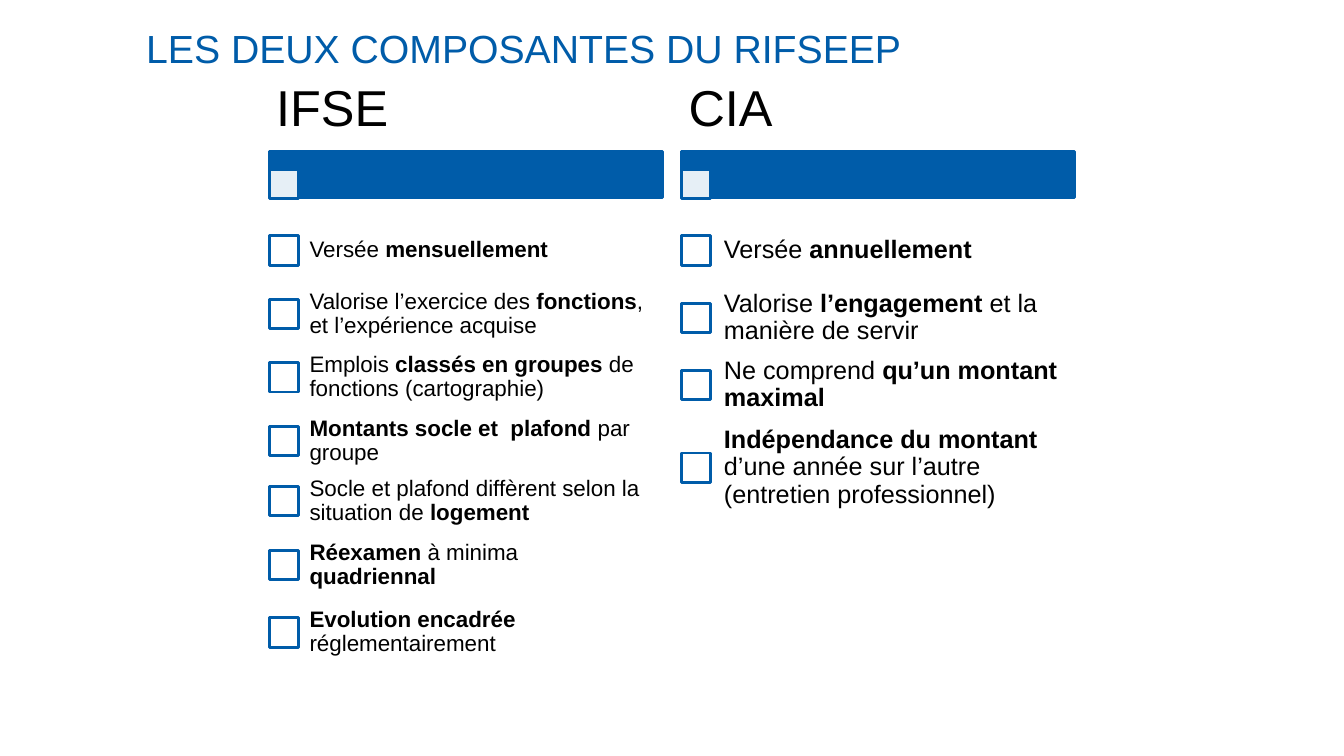
from lxml import etree
from pptx import Presentation
from pptx.dml.color import RGBColor
from pptx.enum.shapes import MSO_SHAPE
from pptx.enum.text import MSO_ANCHOR
from pptx.oxml.ns import qn
from pptx.util import Inches, Pt

RECT = MSO_SHAPE.RECTANGLE
MIDDLE = MSO_ANCHOR.MIDDLE
BLUE, WHITE, BLACK = "005CA9", "FFFFFF", "000000"
TOP = 2.15      # top of the first row
BOX = 0.29      # side of a check box
WIDTH = 3.9     # width of a column

# Each column: left, heading, text size, inset, rows of (height, text);
# asterisks enclose bold text.
COLUMNS = [
    (2.67, "IFSE", 16, 0.12, [
        (0.67, "Versée *mensuellement*"),
        (0.59, "Valorise l’exercice des *fonctions*, et l’expérience acquise"),
        (0.67, "Emplois *classés en groupes* de fonctions (cartographie)"),
        (0.59, "*Montants socle et  plafond *par groupe"),
        (0.6, "Socle et plafond diffèrent selon la situation de *logement*"),
        (0.67, "*Réexamen *à minima *quadriennal*"),
        (0.67, "*Evolution encadrée *réglementairement"),
    ]),
    (6.76, "CIA", 18, 0.14, [
        (0.67, "Versée *annuellement*"),
        (0.67, "Valorise *l’engagement* et la manière de servir"),
        (0.66, "Ne comprend *qu’un montant maximal*"),
        (0.98, "*Indépendance du montant *d’une année sur l’autre "
               "(entretien professionnel)"),
    ]),
]


def color(code):
    return RGBColor.from_string(code)


class Deck:
    font = "Arial"

    def __init__(self):
        self.prs = Presentation()
        self.prs.slide_width = Inches(13.33)
        self.prs.slide_height = Inches(7.5)
        self.slide = self.prs.slides.add_slide(self.prs.slide_layouts[6])

    def rect(self, x, y, w, h, fill, alpha=None):
        """Draw a blue-edged rectangle; alpha is its opacity in percent."""
        shape = self.slide.shapes.add_shape(
            RECT, Inches(x), Inches(y), Inches(w), Inches(h))
        shape.shadow.inherit = False
        shape.fill.solid()
        shape.fill.fore_color.rgb = color(fill)
        shape.line.color.rgb = color(BLUE)
        shape.line.width = Pt(2)
        if alpha:
            tint = shape.fill._xPr.find(qn("a:solidFill"))[0]
            etree.SubElement(tint, qn("a:alpha"), val=str(alpha * 1000))

    def text(self, x, y, w, h, words, size, pad, ink=BLACK, space=0.9):
        """Write one paragraph; pad is the (side, top and bottom) inset."""
        box = self.slide.shapes.add_textbox(
            Inches(x), Inches(y), Inches(w), Inches(h))
        frame = box.text_frame
        frame.word_wrap = True
        frame.vertical_anchor = MIDDLE
        frame.margin_left = frame.margin_right = Inches(pad[0])
        frame.margin_top = frame.margin_bottom = Inches(pad[1])
        para = frame.paragraphs[0]
        para.line_spacing = space
        para.font.name = self.font
        para.font.size = Pt(size)
        para.font.color.rgb = color(ink)
        for i, part in enumerate(words.split("*")):
            if part:
                run = para.add_run()
                run.text = part
                run.font.name = self.font
                run.font.size = Pt(size)
                run.font.color.rgb = color(ink)
                run.font.bold = i % 2 == 1

    def column(self, x, head, size, pad, rows):
        self.rect(x, 1.5, WIDTH, 0.46, BLUE)
        self.rect(x, 1.68, BOX, BOX, WHITE, 90)
        self.text(x, 0.68, WIDTH, 0.82, head, 36, (0.07, 0.05))
        y = TOP
        for high, words in rows:
            self.rect(x, y + (high - BOX) / 2, BOX, BOX, WHITE)
            self.text(x + 0.28, y, WIDTH - 0.28, high, words, size, (pad, pad))
            y += high


def main():
    deck = Deck()
    deck.text(1.33, 0.12, 12, 0.71, "LES DEUX COMPOSANTES DU RIFSEEP",
              28, (0.12, 0.06), BLUE, 1.0)
    for col in COLUMNS:
        deck.column(*col)
    deck.prs.save("out.pptx")


if __name__ == "__main__":
    main()
